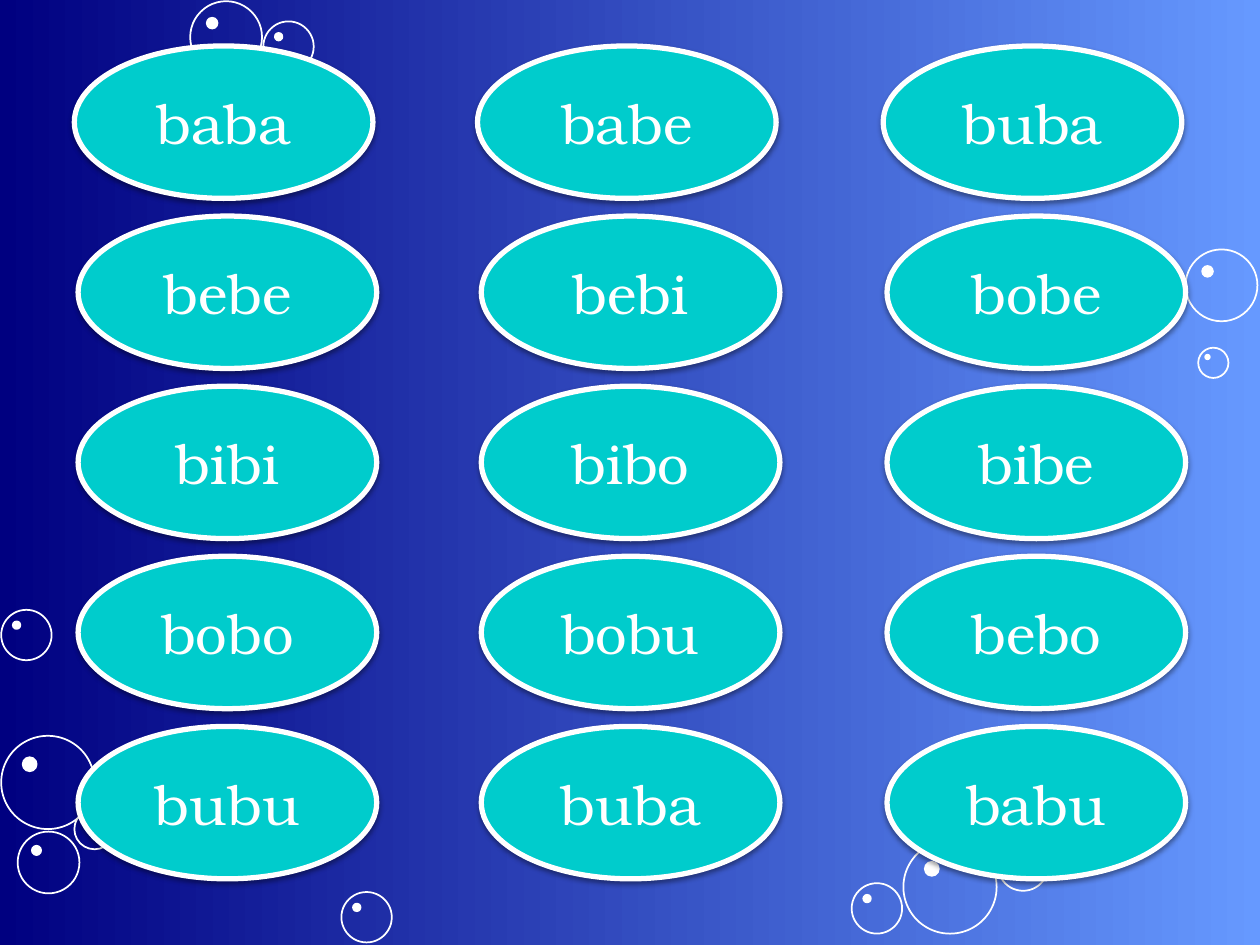
from lxml.etree import SubElement
from pptx import Presentation
from pptx.dml.color import RGBColor as RGB
from pptx.enum.shapes import MSO_SHAPE as SHAPE
from pptx.enum.text import MSO_ANCHOR as ANCHOR, PP_ALIGN as ALIGN
from pptx.oxml.ns import qn
from pptx.util import Inches, Pt

COLOURS = {"navy": "000080", "sky": "6699FF", "teal": "00CCCC",
           "white": "FFFFFF", "black": "000000"}
FONT = "TeX Gyre Bonum"

# Left, top and diameter of each bubble
BUBBLES = [
    (0.01, 5.84, 0.74), (0.59, 6.42, 0.32), (0.14, 6.6, 0.49),
    (2.71, 7.08, 0.4), (0.01, 4.84, 0.4), (7.17, 6.67, 0.74),
    (6.76, 7.01, 0.4), (7.92, 6.67, 0.4), (9.41, 1.98, 0.57),
    (9.51, 2.76, 0.24), (1.51, 0.01, 0.57), (2.09, 0.17, 0.4),
]
GLINT_OFFSET, GLINT_SIZE = 0.23, 0.15  # shares of the bubble's diameter

COLUMNS = [
    (0.62, ["baba", "bebe", "bibi", "bobo", "bubu"]),
    (3.82, ["babe", "bebi", "bibo", "bobu", "buba"]),
    (7.04, ["buba", "bobe", "bibe", "bebo", "babu"]),
]
FIRST_TOP, ROW_STEP = 0.365, 1.35
FIRST_ROW_SHIFT = 0.03  # the first row sits slightly to the left
OVAL_WIDTH, OVAL_HEIGHT = 2.37, 1.21


def add_oval(left, top, width, height, line_width, fill=None):
    oval = page.shapes.add_shape(SHAPE.OVAL, Inches(left), Inches(top),
                                 Inches(width), Inches(height))
    oval.shadow.inherit = False
    if fill:
        oval.fill.solid()
        oval.fill.fore_color.rgb = RGB.from_string(COLOURS[fill])
    else:
        oval.fill.background()
    oval.line.color.rgb = RGB.from_string(COLOURS["white"])
    oval.line.width = Pt(line_width)
    return oval


def add_shadow(shape):
    effects = shape._element.spPr.find(qn("a:effectLst"))
    shadow = SubElement(effects, qn("a:outerShdw"), blurRad=str(Pt(3.1)),
                        dist=str(Pt(1.6)), dir="5400000", rotWithShape="0")
    colour = SubElement(shadow, qn("a:srgbClr"), val=COLOURS["black"])
    SubElement(colour, qn("a:alpha"), val="38000")


deck = Presentation()
deck.slide_width, deck.slide_height = Inches(10), Inches(7.5)
page = deck.slides.add_slide(deck.slide_layouts[6])

backdrop = page.background.fill
backdrop.gradient()
backdrop.gradient_angle = 0
for stop, name in zip(backdrop.gradient_stops, ("navy", "sky")):
    stop.color.rgb = RGB.from_string(COLOURS[name])

for left, top, size in BUBBLES:
    add_oval(left, top, size, size, 1)
    offset, glint = size * GLINT_OFFSET, size * GLINT_SIZE
    add_oval(left + offset, top + offset, glint, glint, 1, "white")

for column_left, words in COLUMNS:
    for row, word in enumerate(words):
        left = column_left if row else column_left - FIRST_ROW_SHIFT
        oval = add_oval(left, FIRST_TOP + row * ROW_STEP,
                        OVAL_WIDTH, OVAL_HEIGHT, 3, "teal")
        add_shadow(oval)
        frame = oval.text_frame
        frame.text = word
        frame.vertical_anchor = ANCHOR.MIDDLE
        para = frame.paragraphs[0]
        para.alignment = ALIGN.CENTER
        font = para.runs[0].font
        font.name, font.size = FONT, Pt(32)
        font.color.rgb = RGB.from_string(COLOURS["white"])

deck.save("out.pptx")
